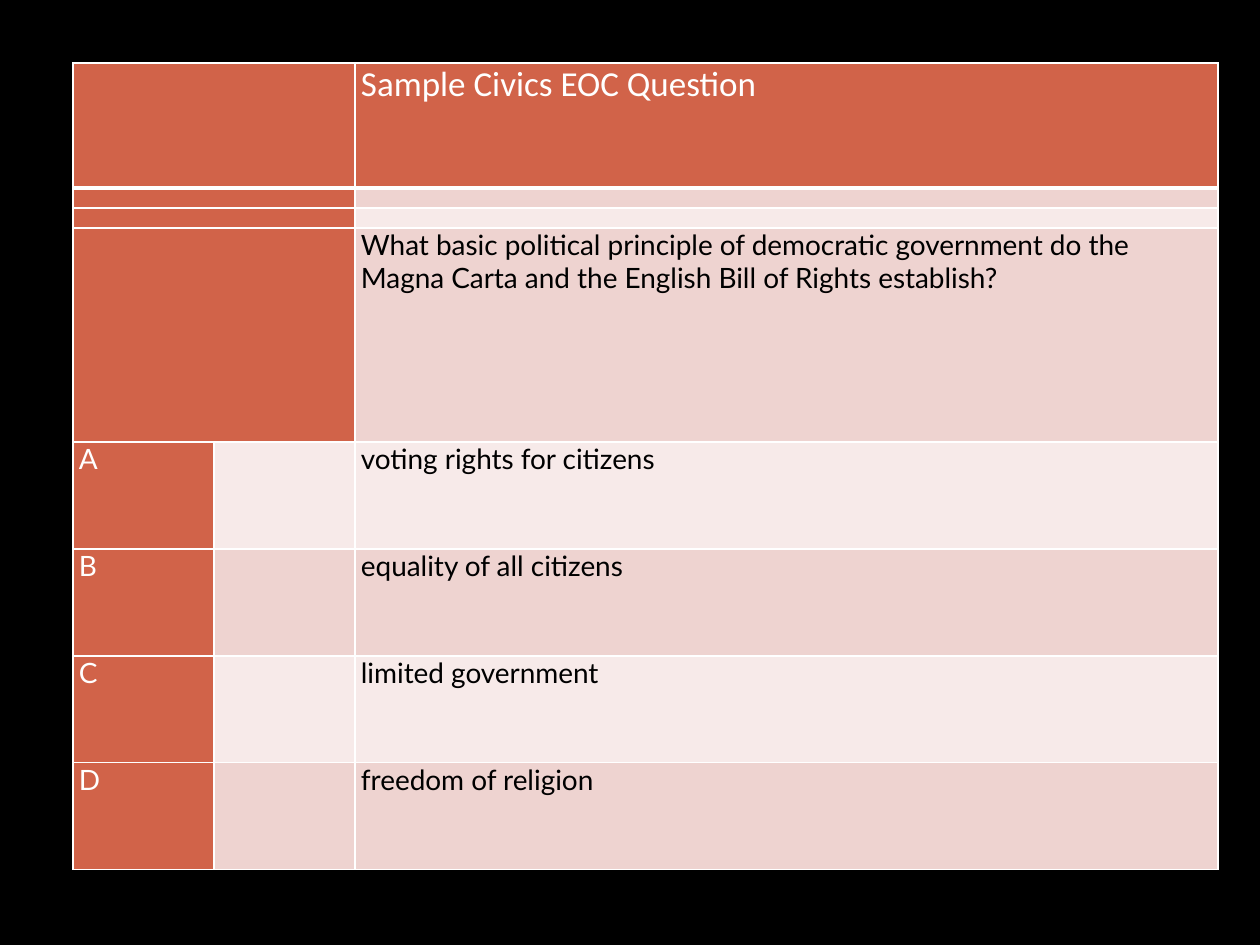
from dataclasses import dataclass

from lxml.etree import SubElement
from pptx import Presentation
from pptx.dml.color import RGBColor
from pptx.enum.text import PP_ALIGN
from pptx.oxml.ns import qn
from pptx.util import Pt

PX = 914400 // 126


@dataclass(frozen=True)
class Theme:
    background: str = "000000"
    accent: str = "D16349"
    dark_band: str = "EED3D0"
    light_band: str = "F7EAE9"
    white: str = "FFFFFF"
    black: str = "000000"
    heading_font: str = "Calibri"
    body_font: str = "Lato"
    heading_size: int = 20
    body_size: int = 16
    spacer_size: int = 6
    rule: int = 1
    heavy_rule: int = 3


theme = Theme()


def write(cell, text, *, color=theme.black, font=theme.body_font, size=theme.body_size):
    """Put text in a cell; an empty cell gets a small size so its row can stay low."""
    cell.margin_left = cell.margin_right = 6 * PX
    cell.margin_top = cell.margin_bottom = 0
    paragraph = cell.text_frame.paragraphs[0]
    paragraph.alignment = PP_ALIGN.LEFT
    if not text:
        SubElement(paragraph._p, qn("a:endParaRPr"), sz=str(theme.spacer_size * 100))
        return
    run = paragraph.add_run()
    run.text = text
    run.font.name = font
    run.font.size = Pt(size)
    run.font.color.rgb = RGBColor.from_string(color)


def paint(cell, fill, top, bottom):
    """Fill a cell and draw its white borders, with top and bottom widths in points."""
    properties = cell._tc.get_or_add_tcPr()
    widths = {"lnL": theme.rule, "lnR": theme.rule, "lnT": top, "lnB": bottom}
    for side, width in widths.items():
        line = SubElement(properties, qn(f"a:{side}"), w=str(Pt(width)))
        solid = SubElement(line, qn("a:solidFill"))
        SubElement(solid, qn("a:srgbClr"), val=theme.white)
    cell.fill.solid()
    cell.fill.fore_color.rgb = RGBColor.from_string(fill)


column_widths = [141, 141, 863]
# Row height, answer letter, wording
question_rows = [
    (125, "", "Sample Civics EOC Question"),
    (20, "", ""),
    (20, "", ""),
    (214, "", "What basic political principle of democratic government do the "
              "Magna Carta and the English Bill of Rights establish?"),
    (107, "A", "voting rights for citizens"),
    (107, "B", "equality of all citizens"),
    (107, "C", "limited government"),
    (107, "D", "freedom of religion"),
]

presentation = Presentation()
presentation.slide_width = 1260 * PX
presentation.slide_height = 945 * PX
slide = presentation.slides.add_slide(presentation.slide_layouts[6])
slide.background.fill.solid()
slide.background.fill.fore_color.rgb = RGBColor.from_string(theme.background)

table_height = sum(height for height, _, _ in question_rows)
table = slide.shapes.add_table(
    len(question_rows), len(column_widths),
    73 * PX, 63 * PX, sum(column_widths) * PX, table_height * PX,
).table
table.first_col = True
for column, width in zip(table.columns, column_widths):
    column.width = width * PX

for index, (height, letter, wording) in enumerate(question_rows):
    table.rows[index].height = height * PX
    is_heading = index == 0
    band = theme.dark_band if index % 2 else theme.light_band
    body_fill = theme.accent if is_heading else band
    middle_fill = body_fill if letter else theme.accent
    top = theme.heavy_rule if index == 1 else theme.rule
    bottom = theme.heavy_rule if is_heading else theme.rule

    letter_cell, middle_cell, wording_cell = (table.cell(index, i) for i in range(3))
    if not letter:
        letter_cell.merge(middle_cell)
    for cell, fill in ((letter_cell, theme.accent), (middle_cell, middle_fill),
                       (wording_cell, body_fill)):
        paint(cell, fill, top, bottom)

    write(letter_cell, letter, color=theme.white)
    write(middle_cell, "")
    if is_heading:
        write(wording_cell, wording, color=theme.white,
              font=theme.heading_font, size=theme.heading_size)
    else:
        write(wording_cell, wording)

presentation.save("out.pptx")
